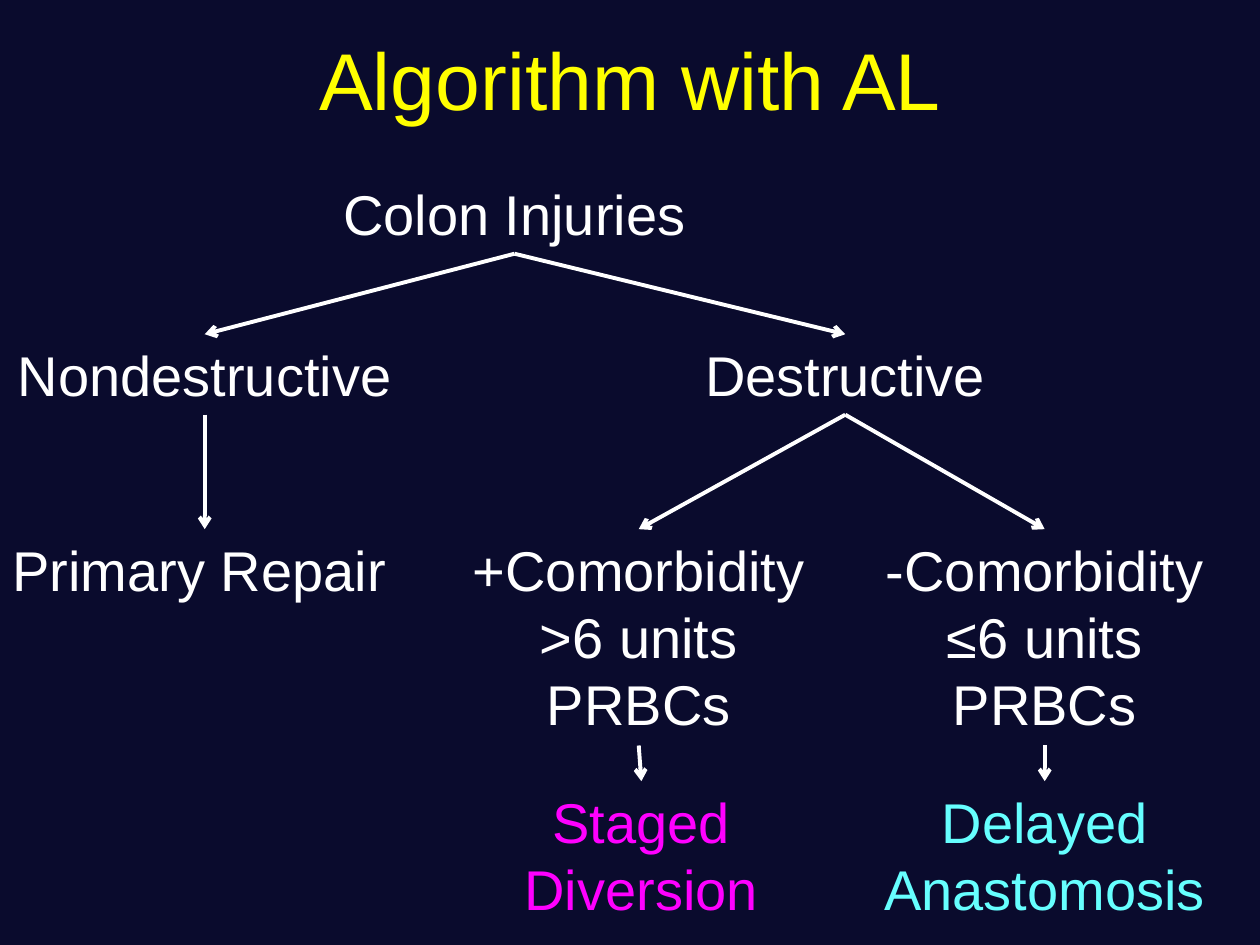
from lxml import etree
from pptx import Presentation
from pptx.dml.color import RGBColor
from pptx.enum.shapes import MSO_CONNECTOR
from pptx.enum.text import MSO_ANCHOR, PP_ALIGN
from pptx.oxml.ns import qn
from pptx.util import Pt

STRAIGHT = MSO_CONNECTOR.STRAIGHT
MIDDLE = MSO_ANCHOR.MIDDLE
CENTER, LEFT = PP_ALIGN.CENTER, PP_ALIGN.LEFT

COLORS = {
    "background": "0A0B2D",
    "title": "FFFF00",
    "text": "FFFFFF",
    "staged": "FF00FF",
    "delayed": "66FFFF",
}
TITLE = "Algorithm with AL"
ROW_TOPS = [99, 191, 302.4, 446.4]
LINE_HEIGHT = 38.8
PADDING = 7.2

# name: (wording, row, left, width, lines, alignment, colour)
STEPS = {
    "injuries": ("Colon Injuries", 0, 54, 480, 1, CENTER, "text"),
    "nondestructive": ("Nondestructive", 1, 0, 234, 1, CENTER, "text"),
    "destructive": ("Destructive", 1, 384, 198, 1, CENTER, "text"),
    "repair": ("Primary Repair", 2, 0, 234, 1, LEFT, "text"),
    "high risk": ("+Comorbidity >6 units PRBCs", 2, 246.5, 237, 3, CENTER, "text"),
    "low risk": ("-Comorbidity ≤6 units PRBCs", 2, 483, 228, 3, CENTER, "text"),
    "staged": ("Staged Diversion", 3, 286.5, 160, 2, CENTER, "staged"),
    "delayed": ("Delayed Anastomosis", 3, 483, 228, 2, CENTER, "delayed"),
}
BRANCHES = [
    ("injuries", "nondestructive"),
    ("injuries", "destructive"),
    ("nondestructive", "repair"),
    ("destructive", "high risk"),
    ("destructive", "low risk"),
    ("high risk", "staged"),
    ("low risk", "delayed"),
]


def color(name):
    return RGBColor.from_string(COLORS[name])


def write(frame, wording, size, color_name, alignment):
    frame.word_wrap = True
    paragraph = frame.paragraphs[0]
    paragraph.alignment = alignment
    run = paragraph.add_run()
    run.text = wording
    run.font.name = "Arial"
    run.font.size = Pt(size)
    run.font.color.rgb = color(color_name)


def add_step(slide, wording, row, left, width, lines, alignment, color_name):
    top = ROW_TOPS[row]
    height = lines * LINE_HEIGHT + PADDING
    box = slide.shapes.add_textbox(Pt(left), Pt(top), Pt(width), Pt(height))
    write(box.text_frame, wording, 32, color_name, alignment)
    return box


def add_branch(slide, parent, child):
    arrow = slide.shapes.add_connector(
        STRAIGHT,
        parent.left + parent.width // 2, parent.top + parent.height,
        child.left + child.width // 2, child.top,
    )
    arrow.line.width = Pt(2.25)
    arrow.line.color.rgb = color("text")
    etree.SubElement(arrow.line._get_or_add_ln(), qn("a:tailEnd"), type="arrow")
    etree.SubElement(arrow._element.spPr, qn("a:effectLst"))


def main():
    deck = Presentation()
    deck.slide_width, deck.slide_height = Pt(720), Pt(540)
    slide = deck.slides.add_slide(deck.slide_layouts[5])
    slide.background.fill.solid()
    slide.background.fill.fore_color.rgb = color("background")

    title = slide.shapes.title
    title.left, title.top, title.width, title.height = Pt(0), Pt(0), Pt(720), Pt(90)
    title.text_frame.vertical_anchor = MIDDLE
    write(title.text_frame, TITLE, 46, "title", CENTER)

    boxes = {name: add_step(slide, *step) for name, step in STEPS.items()}
    for parent, child in BRANCHES:
        add_branch(slide, boxes[parent], boxes[child])

    deck.save("out.pptx")


if __name__ == "__main__":
    main()
